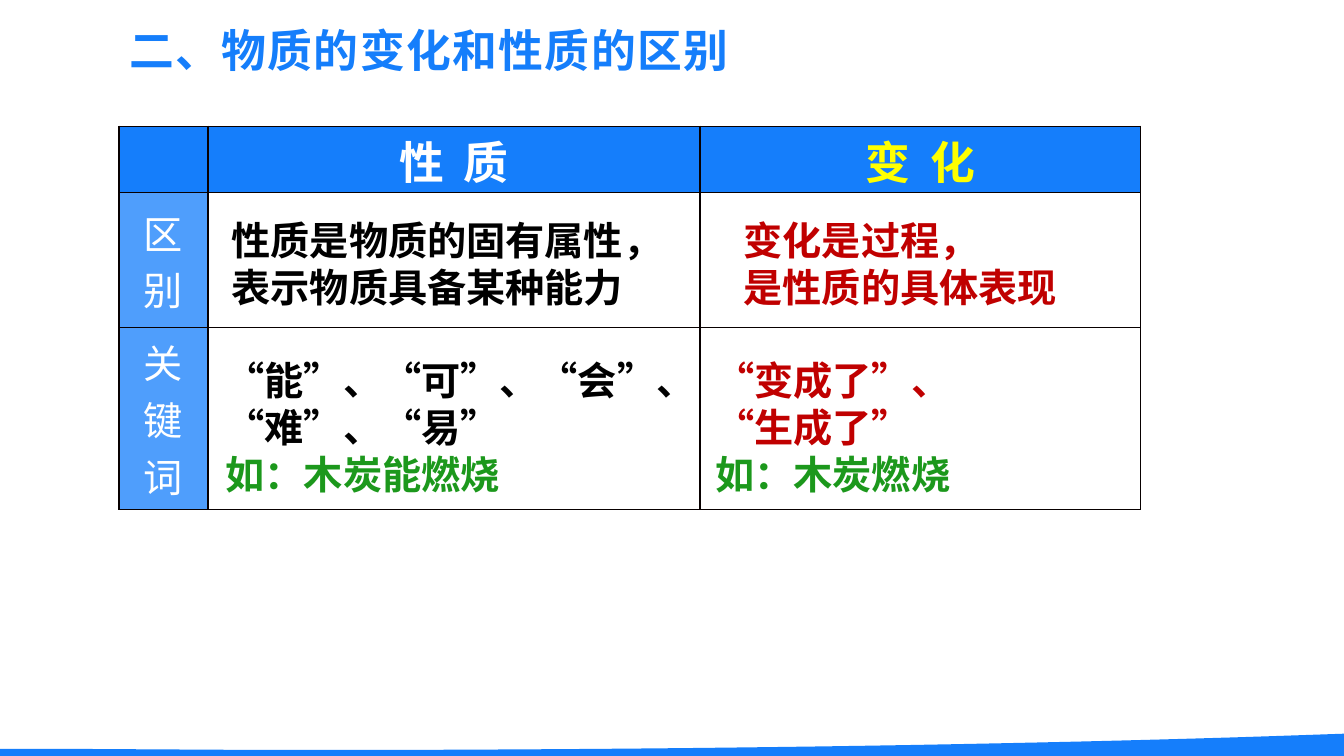
from lxml import etree
from pptx import Presentation
from pptx.dml.color import RGBColor
from pptx.enum.lang import MSO_LANGUAGE_ID as Language
from pptx.enum.text import MSO_ANCHOR as Anchor, MSO_AUTO_SIZE as AutoSize, PP_ALIGN as Align
from pptx.oxml import parse_xml
from pptx.oxml.ns import nsdecls, qn
from pptx.util import Cm, Pt

BLUE = RGBColor(0x15, 0x7E, 0xFB)
WHITE = RGBColor(0xFF, 0xFF, 0xFF)
YELLOW = RGBColor(0xFF, 0xFF, 0x00)
BLACK = RGBColor(0x00, 0x00, 0x00)
RED = RGBColor(0xC0, 0x00, 0x00)
GREEN = RGBColor(0x1C, 0x98, 0x1C)
CJK_FONT = "Noto Sans CJK SC"


def style_run(run, size, color, bold=True, latin=CJK_FONT, spacing=0):
    font = run.font
    font.size = Pt(size)
    font.bold = bold
    font.color.rgb = color
    font.name = latin
    font.language_id = Language.SIMPLIFIED_CHINESE
    properties = run._r.get_or_add_rPr()
    properties.set("spc", str(spacing))
    properties.find(qn("a:latin")).addnext(
        parse_xml(f'<a:ea {nsdecls("a")} typeface="{CJK_FONT}"/>'))


def curve_points(start, control_1, control_2, end, steps=24):
    points = []
    for step in range(1, steps + 1):
        t = step / steps
        weights = ((1 - t) ** 3, 3 * t * (1 - t) ** 2, 3 * t ** 2 * (1 - t), t ** 3)
        corners = (start, control_1, control_2, end)
        points.append(tuple(
            Cm(sum(weight * corner[axis] for weight, corner in zip(weights, corners)))
            for axis in (0, 1)))
    return points


presentation = Presentation()
presentation.slide_width = Cm(33.87)
presentation.slide_height = Cm(19.05)
slide = presentation.slides.add_slide(presentation.slide_layouts[5])

wave_start, wave_low, wave_end = (0.48, 18.87), (7.7, 18.9), (33.83, 18.49)
builder = slide.shapes.build_freeform(Cm(33.87), Cm(18.49))
builder.add_line_segments(
    [(Cm(x), Cm(y)) for x, y in ((33.87, 19.05), (0, 19.05), (0, 18.87), wave_start)]
    + curve_points(wave_start, (2.82, 18.87), (5.23, 18.9), wave_low)
    + curve_points(wave_low, (17.65, 18.9), (26.77, 18.75), wave_end))
wave = builder.convert_to_shape()
wave.shadow.inherit = False
wave.fill.solid()
wave.fill.fore_color.rgb = BLUE
wave.line.fill.background()

title = slide.shapes.title
title.left, title.top, title.width, title.height = Cm(3), Cm(0.43), Cm(15.8), Cm(1.63)
title.text_frame.text = "二、物质的变化和性质的区别"
title.text_frame.vertical_anchor = Anchor.MIDDLE
title.text_frame.word_wrap = False
title_paragraph = title.text_frame.paragraphs[0]
title_paragraph.alignment = Align.LEFT
style_run(title_paragraph.runs[0], 32, BLUE, latin="Times New Roman", spacing=100)

column_widths = (2.24, 12.4, 11.1)
row_heights = (1.68, 3.4, 4.57)
table = slide.shapes.add_table(
    3, 3, Cm(3), Cm(3.18), Cm(sum(column_widths)), Cm(sum(row_heights))).table
for column, width in zip(table.columns, column_widths):
    column.width = Cm(width)
for row, height in zip(table.rows, row_heights):
    row.height = Cm(height)

cell_texts = {
    (0, 1): ("性 质", 32, WHITE, True, 350),
    (0, 2): ("变 化", 32, YELLOW, True, 350),
    (1, 0): ("区\n别", 28, WHITE, False, 0),
    (2, 0): ("关键词", 28, WHITE, False, 0),
}
for row in range(3):
    for column in range(3):
        cell = table.cell(row, column)
        cell.vertical_anchor = Anchor.MIDDLE
        cell.margin_left = cell.margin_right = Cm(0.18)
        cell.margin_top = cell.margin_bottom = 0
        cell_properties = cell._tc.get_or_add_tcPr()
        for side in ("lnL", "lnR", "lnT", "lnB"):
            cell_properties.append(parse_xml(
                f'<a:{side} {nsdecls("a")} w="12700"><a:solidFill>'
                f'<a:srgbClr val="080000"/></a:solidFill></a:{side}>'))
        if row == 0 or column == 0:
            cell.fill.solid()
            cell.fill.fore_color.rgb = BLUE
            if row > 0:
                color_element = cell_properties.find(qn("a:solidFill"))[0]
                etree.SubElement(color_element, qn("a:alpha")).set("val", "75000")
        else:
            cell.fill.background()
        if (row, column) in cell_texts:
            text, size, color, bold, spacing = cell_texts[row, column]
            cell.text_frame.text = text
            for paragraph in cell.text_frame.paragraphs:
                paragraph.alignment = Align.CENTER
                style_run(paragraph.runs[0], size, color, bold, spacing=spacing)

notes = (
    (5.59, 5.33, 11.43, 2.64, (("性质是物质的固有属性，表示物质具备某种能力", BLACK),)),
    (18.49, 5.33, 9.04, 2.64, (("变化是过程，", RED), ("是性质的具体表现", RED))),
    (17.78, 8.84, 11.25, 3.84,
     (("“变成了”、", RED), ("“生成了”", RED), ("如：木炭燃烧", GREEN))),
    (5.44, 8.84, 11.76, 3.84,
     (("“能”、“可”、“会”、“难”、“易”", BLACK), ("如：木炭能燃烧", GREEN))),
)
for left, top, width, height, lines in notes:
    text_frame = slide.shapes.add_textbox(Cm(left), Cm(top), Cm(width), Cm(height)).text_frame
    text_frame.word_wrap = True
    text_frame.auto_size = AutoSize.SHAPE_TO_FIT_TEXT
    text_frame.text = "\n".join(text for text, color in lines)
    for paragraph, (text, color) in zip(text_frame.paragraphs, lines):
        paragraph.line_spacing = Pt(33.7)
        style_run(paragraph.runs[0], 28, color)

presentation.save("out.pptx")
